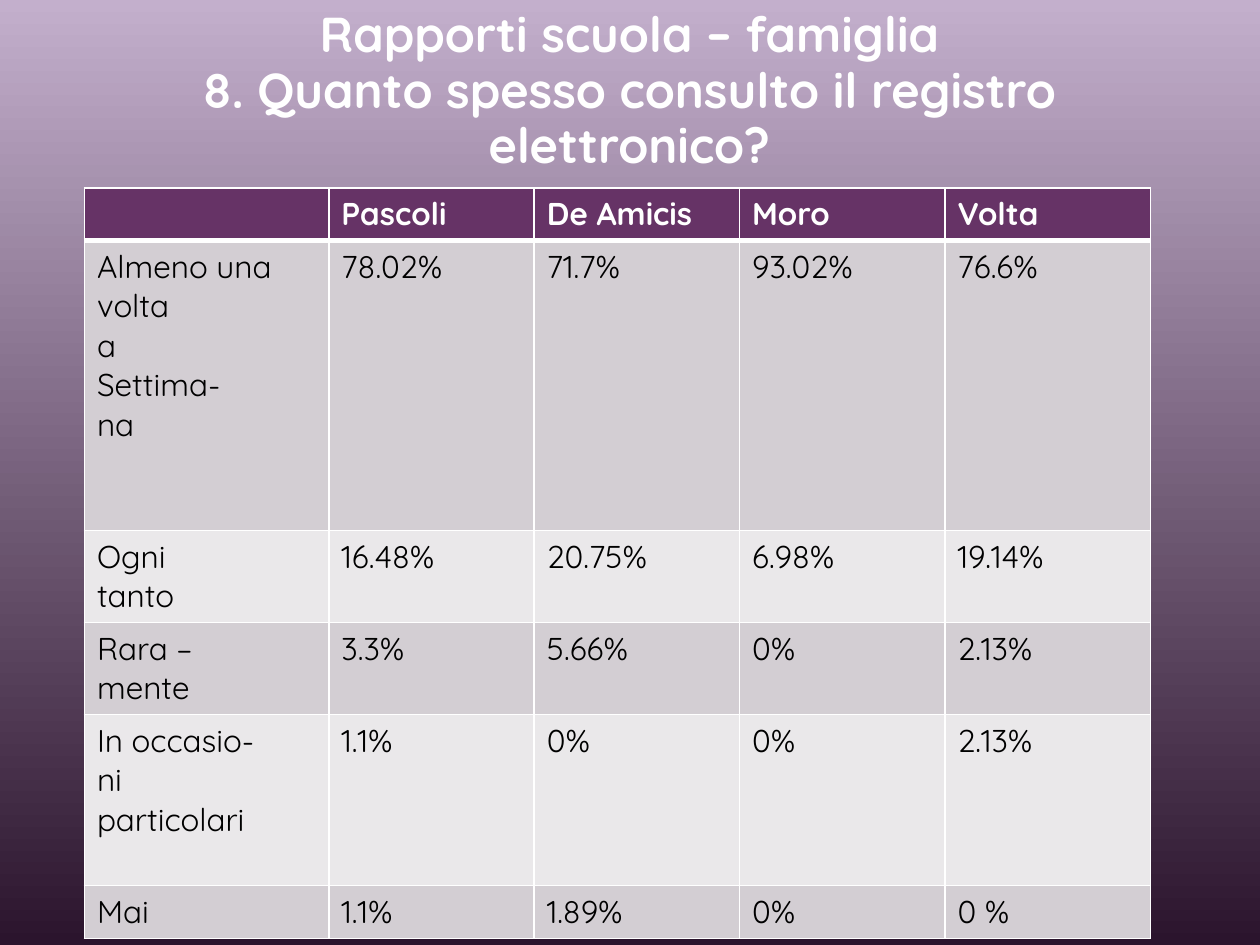
from copy import deepcopy
from lxml import etree
from pptx import Presentation
from pptx import util as u
from pptx.dml.color import RGBColor
from pptx.enum import text
from pptx.oxml import ns

FONT = "Quicksand"
WHITE = RGBColor(0xFF, 0xFF, 0xFF)
BLACK = RGBColor(0x00, 0x00, 0x00)
LILAC = RGBColor(0xC3, 0xAF, 0xCC)
DARK_PURPLE = RGBColor(0x2B, 0x14, 0x2D)
HEADER_PURPLE = RGBColor(0x66, 0x33, 0x66)
BAND_DARK = RGBColor(0xD3, 0xCE, 0xD3)
BAND_LIGHT = RGBColor(0xEA, 0xE8, 0xEA)


def write(frame, content, size=18, color=BLACK, bold=False, align=None, spacing=None):
    """Newlines part paragraphs; vertical tabs break lines within one."""
    frame.text = content
    for paragraph in frame.paragraphs:
        paragraph.alignment = align
        paragraph.line_spacing = spacing
        for run in paragraph.runs:
            run.font.name = FONT
            run.font.size = u.Pt(size)
            run.font.bold = bold
            run.font.color.rgb = color
        # Line breaks take the format of the text around them
        for line_break in paragraph._p.findall(ns.qn("a:br")):
            line_break.append(deepcopy(paragraph.runs[0]._r.rPr))


def set_borders(cell, **widths):
    properties = cell._tc.get_or_add_tcPr()
    for position, (side, width) in enumerate(widths.items()):
        line = etree.Element(ns.qn(f"a:{side}"), w=str(u.Pt(width)))
        fill = etree.SubElement(line, ns.qn("a:solidFill"))
        etree.SubElement(fill, ns.qn("a:srgbClr"), val=str(WHITE))
        properties.insert(position, line)


presentation = Presentation()
presentation.slide_width = u.Inches(10)
presentation.slide_height = u.Inches(7.5)
slide = presentation.slides.add_slide(presentation.slide_layouts[5])

# Background, light at the top
background = slide.background.fill
background.gradient()
background.gradient_angle = 270
for stop, color, position in zip(background.gradient_stops, (LILAC, DARK_PURPLE), (0, 1)):
    stop.color.rgb = color
    stop.position = position

# Title
title = slide.shapes.title
title.left, title.top = u.Inches(0.85), u.Inches(0.1)
title.width, title.height = u.Inches(8.29), u.Inches(1.25)
title.text_frame.word_wrap = True
title.text_frame.auto_size = text.MSO_AUTO_SIZE.NONE
title.text_frame.vertical_anchor = text.MSO_ANCHOR.MIDDLE
write(title.text_frame,
      "Rapporti scuola – famiglia\v8. Quanto spesso consulto il registro elettronico?",
      size=28, color=WHITE, bold=True, align=text.PP_ALIGN.CENTER, spacing=0.95)

# Answers by school
answers = [
    ["", "Pascoli", "De Amicis", "Moro", "Volta"],
    ["Almeno una\nvolta\na\nSettima-\nna", "78.02%", "71.7%", "93.02%", "76.6%"],
    ["Ogni\ntanto", "16.48%", "20.75%", "6.98%", "19.14%"],
    ["Rara –\nmente", "3.3%", "5.66%", "0%", "2.13%"],
    ["In occasio-\nni\nparticolari", "1.1%", "0%", "0%", "2.13%"],
    ["Mai", "1.1%", "1.89%", "0%", "0 %"],
]
column_widths = [1.94] + [1.63] * 4
row_heights = [0.42, 2.3, 0.73, 0.73, 1.36, 0.42]
table = slide.shapes.add_table(
    len(row_heights), len(column_widths), u.Inches(0.67), u.Inches(1.49),
    u.Inches(sum(column_widths)), u.Inches(sum(row_heights))).table
for column, width in zip(table.columns, column_widths):
    column.width = u.Inches(width)

for row_index, (row, height) in enumerate(zip(answers, row_heights)):
    table.rows[row_index].height = u.Inches(height)
    header = row_index == 0
    band = HEADER_PURPLE if header else BAND_DARK if row_index % 2 else BAND_LIGHT
    for column_index, content in enumerate(row):
        cell = table.cell(row_index, column_index)
        write(cell.text_frame, content, color=WHITE if header else BLACK, bold=header)
        cell.fill.solid()
        cell.fill.fore_color.rgb = band
        set_borders(cell, lnL=1, lnR=1, lnT=3 if row_index == 1 else 1,
                    lnB=3 if header else 1)

presentation.save("out.pptx")
